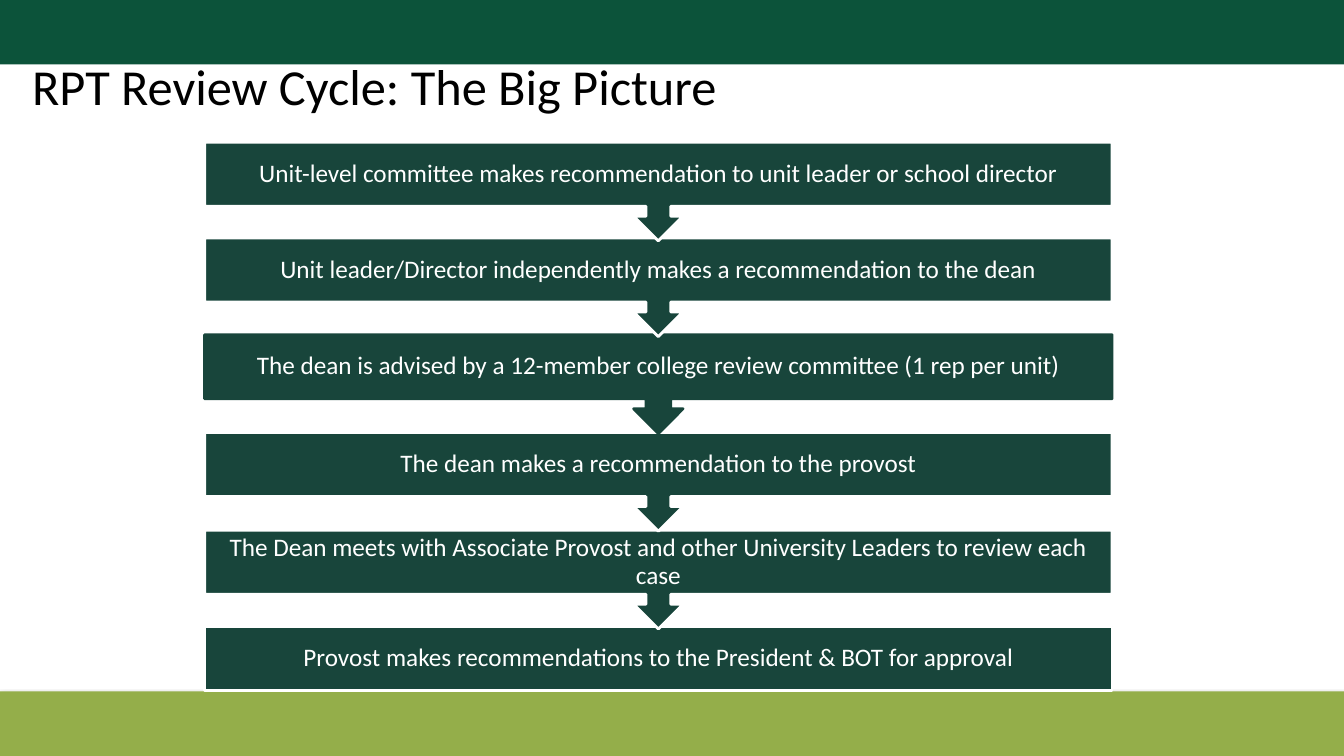
from lxml import etree
from pptx import Presentation
from pptx import util as u
from pptx.dml.color import RGBColor
from pptx.enum import shapes, text
from pptx.oxml import ns

PX = 9144
PINE = RGBColor(0x18, 0x45, 0x3B)
GREEN = RGBColor(0x0C, 0x53, 0x3A)
LIME = RGBColor(0x94, 0xAE, 0x4A)
WHITE = RGBColor(0xFF, 0xFF, 0xFF)
BLACK = RGBColor(0, 0, 0)
KIND = shapes.MSO_SHAPE

deck = Presentation()
deck.slide_width, deck.slide_height = 1333 * PX, 750 * PX
slide = deck.slides.add_slide(deck.slide_layouts[6])


def block(kind, box, fill, line=None):
    item = slide.shapes.add_shape(kind, *[n * PX for n in box])
    item.shadow.inherit = False
    item.fill.solid()
    item.fill.fore_color.rgb = fill
    if line is None:
        item.line.fill.background()
    else:
        item.line.color.rgb = line
        item.line.width = u.Pt(2)
    return item


def write(frame, words, size, color, align):
    frame.word_wrap = True
    frame.vertical_anchor = text.MSO_ANCHOR.MIDDLE
    para = frame.paragraphs[0]
    para.text = words
    para.alignment = align
    para.line_spacing = 0.9
    para.font.name = "Calibri"
    para.font.size = u.Pt(size)
    para.font.color.rgb = color


foot = block(KIND.RECTANGLE, (0, 686, 1333, 64), LIME)
glow = foot._element.spPr.find(ns.qn("a:effectLst"))
shade = etree.SubElement(glow, ns.qn("a:outerShdw"), blurRad="40000",
                         dist="23000", dir="5400000", rotWithShape="0")
tint = etree.SubElement(shade, ns.qn("a:srgbClr"), val="000000")
etree.SubElement(tint, ns.qn("a:alpha"), val="35000")
block(KIND.RECTANGLE, (0, 0, 1333, 64), GREEN)

steps = [
    (622, "Provost makes recommendations to the President & BOT for approval", WHITE),
    (526, "The Dean meets with Associate Provost and other University Leaders to review each case", WHITE),
    (429, "The dean makes a recommendation to the provost", WHITE),
    (332, "The dean is advised by a 12-member college review committee (1 rep per unit)", PINE),
    (236, "Unit leader/Director independently makes a recommendation to the dean", WHITE),
    (141, "Unit-level committee makes recommendation to unit leader or school director", WHITE),
]
for rank, (top, words, edge) in enumerate(steps):
    kind, high = (KIND.DOWN_ARROW_CALLOUT, 98) if rank else (KIND.RECTANGLE, 63)
    step = block(kind, (203, top, 900, high), PINE, edge)
    frame = step.text_frame
    frame.margin_left = frame.margin_right = 14 * PX
    frame.margin_top = frame.margin_bottom = 14 * PX
    write(frame, words, 18, WHITE, text.PP_ALIGN.CENTER)

title = slide.shapes.add_textbox(*[n * PX for n in (22, 16, 1150, 145)])
write(title.text_frame, "RPT Review Cycle: The Big Picture", 36, BLACK, text.PP_ALIGN.LEFT)

deck.save("out.pptx")
